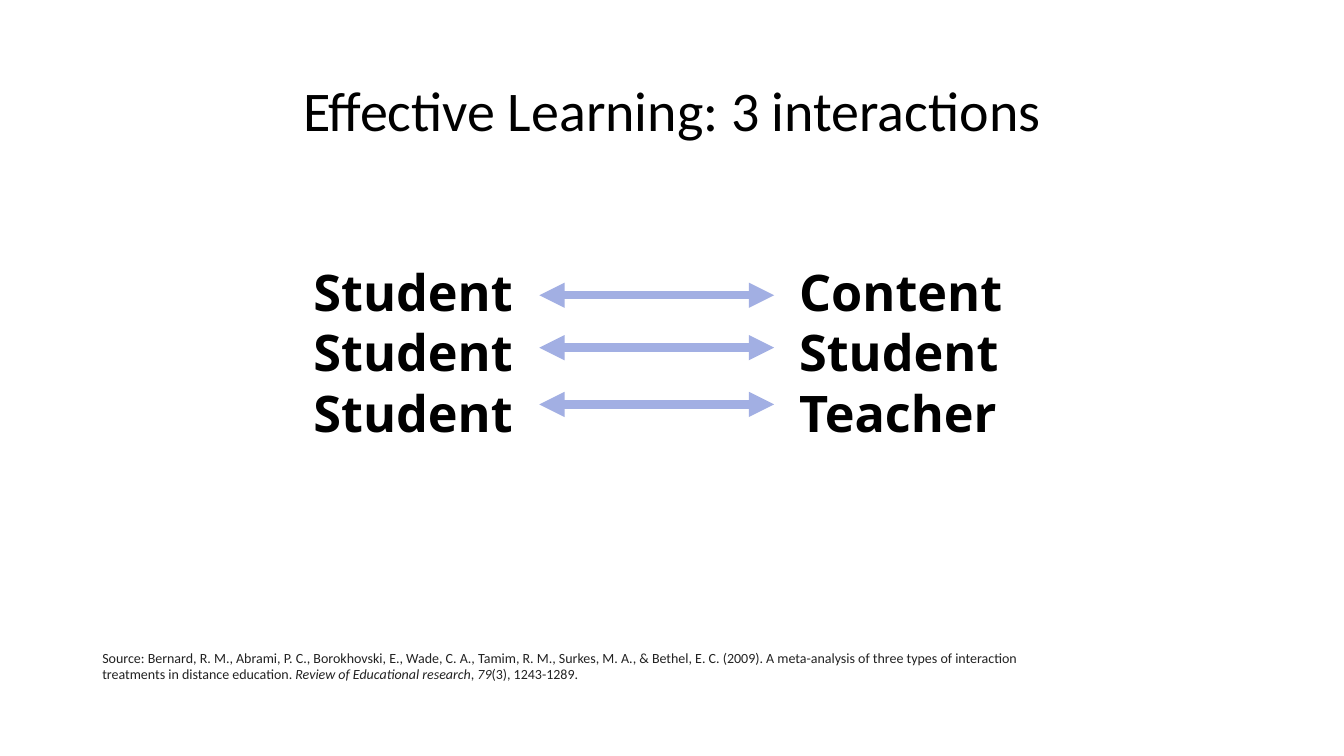
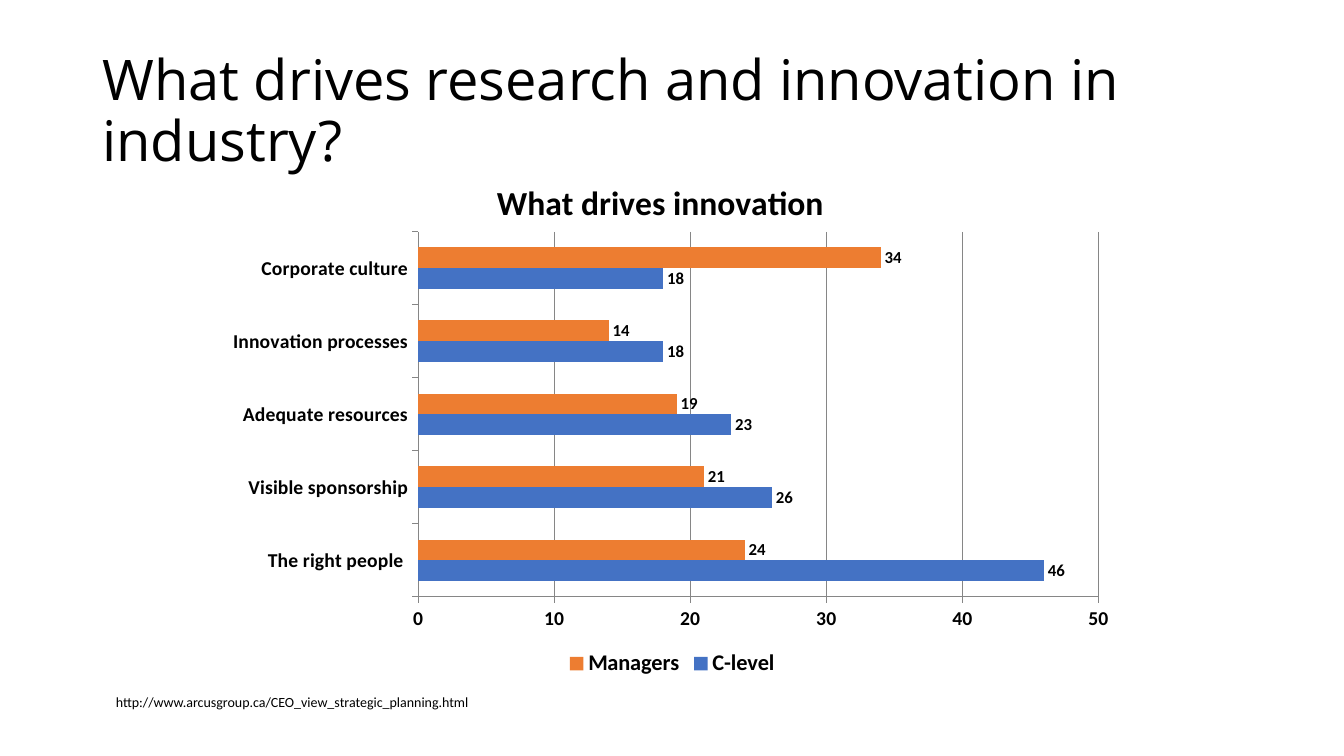
from lxml import etree
from pptx import Presentation
from pptx.chart.data import CategoryChartData
from pptx.dml.color import RGBColor
from pptx.enum import chart as ch, shapes, text
from pptx.oxml import parse_xml
from pptx.oxml.ns import nsdecls, qn
from pptx.util import Cm, Pt

BLACK = RGBColor(0x00, 0x00, 0x00)
SOURCE_GREY = RGBColor(0x22, 0x22, 0x22)
ARROW_BLUE = RGBColor(0xA2, 0xAF, 0xE3)
AXIS_GREY = RGBColor(0x86, 0x86, 0x86)
BLUE = RGBColor(0x44, 0x72, 0xC4)
ORANGE = RGBColor(0xED, 0x7D, 0x31)
SANS, DISPLAY = "Calibri", "Open Sans"

# Boxes are left, top, width, height in centimetres
TITLE_BOX = (2.33, 1.01, 29.21, 3.68)

INTERACTIONS_TITLE = "Effective Learning: 3 interactions"
PARTNERS = [
    ((7.65, 6.45, 5.59, 4.88), ["Student", "Student", "Student"]),
    ((19.89, 6.45, 5.87, 4.88), ["Content", "Student", "Teacher"]),
]
ARROW_LEFT, ARROW_RIGHT = 13.59, 19.51
ARROW_ROWS = [7.44, 8.76, 10.19]
SOURCE_BOX = (2.33, 16.23, 24.84, 1.12)
SOURCE = [  # text, italic
    ("Source: Bernard, R. M., Abrami, P. C., Borokhovski, E., Wade, C. A., "
     "Tamim, R. M., Surkes, M. A., & Bethel, E. C. (2009). A meta-analysis of "
     "three types of interaction treatments in distance education. ", False),
    ("Review of Educational research", True),
    (", ", False),
    ("79", True),
    ("(3), 1243-1289.", False),
]

DRIVERS_TITLE = "What drives research and innovation in industry?"
CHART_BOX = (5.51, 3.84, 22.86, 13.34)
CHART_TITLE = "What drives innovation"
DRIVERS = ["The right people ", "Visible sponsorship", "Adequate resources",
           "Innovation processes", "Corporate culture"]
SERIES = [
    ("C-level", BLUE, [46, 26, 23, 18, 18]),
    ("Managers", ORANGE, [24, 21, 19, 14, 34]),
]
LINK_BOX = (2.67, 17.35, 9.68, 0.69)
LINK = "http://www.arcusgroup.ca/CEO_view_strategic_planning.html"


def set_font(font, size, name=SANS, color=BLACK, bold=False, italic=False):
    font.name, font.size = name, Pt(size)
    font.bold, font.italic = bold, italic
    font.color.rgb = color


def write(tf, paragraphs, align=text.PP_ALIGN.LEFT, spacing=None, **fmt):
    """Fill a text frame; a paragraph is a string or a list of (text, italic)."""
    for i, runs in enumerate(paragraphs):
        p = tf.add_paragraph() if i else tf.paragraphs[0]
        p.alignment = align
        p.line_spacing = spacing
        for words, italic in [(runs, False)] if isinstance(runs, str) else runs:
            r = p.add_run()
            r.text = words
            set_font(r.font, italic=italic, **fmt)


def add_text(slide, box, paragraphs, wrap=False, **fmt):
    tf = slide.shapes.add_textbox(*map(Cm, box)).text_frame
    tf.word_wrap = wrap
    tf.auto_size = text.MSO_AUTO_SIZE.SHAPE_TO_FIT_TEXT
    write(tf, paragraphs, **fmt)


def add_titled_slide(prs, title, **fmt):
    slide = prs.slides.add_slide(prs.slide_layouts[5])
    sp = slide.shapes.title
    sp.left, sp.top, sp.width, sp.height = map(Cm, TITLE_BOX)
    tf = sp.text_frame
    tf.word_wrap = True
    tf.auto_size = text.MSO_AUTO_SIZE.NONE
    tf.vertical_anchor = text.MSO_ANCHOR.MIDDLE
    write(tf, [title], size=40, spacing=0.9, **fmt)
    return slide


def add_double_arrow(slide, y):
    line = slide.shapes.add_connector(
        shapes.MSO_CONNECTOR.STRAIGHT,
        Cm(ARROW_LEFT), Cm(y), Cm(ARROW_RIGHT), Cm(y))
    line.line.color.rgb = ARROW_BLUE
    line.line.width = Pt(6)
    ln = line.line._get_or_add_ln()
    for end in ("a:headEnd", "a:tailEnd"):
        etree.SubElement(ln, qn(end), type="triangle")
    etree.SubElement(line._element.spPr, qn("a:effectLst"))


def manual_layout(**values):
    modes = "".join(f'<c:{k}Mode val="edge"/>' for k in ("x", "y"))
    sizes = "".join(f'<c:{k} val="{v}"/>' for k, v in values.items())
    target = '<c:layoutTarget val="inner"/>' if "w" in values else ""
    return parse_xml(f'<c:layout {nsdecls("c")}><c:manualLayout>{target}'
                     f'{modes}{sizes}</c:manualLayout></c:layout>')


def drop_layout(element):
    for old in element.findall(qn("c:layout")):
        element.remove(old)


def place_chart_parts(chart):
    title = chart.chart_title._element
    drop_layout(title)
    title.find(qn("c:tx")).addnext(manual_layout(x=0.3, y=0.04))
    plot_area = chart._chartSpace.chart.plotArea
    drop_layout(plot_area)
    plot_area.insert(0, manual_layout(x=0.22, y=0.15, w=0.75, h=0.69))


def style_line(line):
    line.color.rgb = AXIS_GREY
    line.width = Pt(0.75)


def add_drivers_chart(slide):
    data = CategoryChartData()
    data.categories = DRIVERS
    for name, _, values in SERIES:
        data.add_series(name, values)
    chart = slide.shapes.add_chart(
        ch.XL_CHART_TYPE.BAR_CLUSTERED, *map(Cm, CHART_BOX), data).chart
    set_font(chart.font, 10)

    chart.has_title = True
    write(chart.chart_title.text_frame, [CHART_TITLE],
          align=text.PP_ALIGN.CENTER, size=24, bold=True)
    chart.has_legend = True
    chart.legend.position = ch.XL_LEGEND_POSITION.BOTTOM
    chart.legend.include_in_layout = False
    set_font(chart.legend.font, 16, bold=True)

    for axis in (chart.category_axis, chart.value_axis):
        axis.major_tick_mark = ch.XL_TICK_MARK.OUTSIDE
        axis.minor_tick_mark = ch.XL_TICK_MARK.NONE
        set_font(axis.tick_labels.font, 14, bold=True)
        style_line(axis.format.line)
    scale = chart.value_axis
    scale.minimum_scale, scale.maximum_scale, scale.major_unit = 0, 50, 10
    scale.has_major_gridlines = True
    style_line(scale.major_gridlines.format.line)

    plot = chart.plots[0]
    plot.gap_width = 150
    plot.vary_by_categories = False
    for series, (_, color, _) in zip(plot.series, SERIES):
        series.format.fill.solid()
        series.format.fill.fore_color.rgb = color
        labels = series.data_labels
        labels.show_value = True
        labels.position = ch.XL_LABEL_POSITION.OUTSIDE_END
        set_font(labels.font, 12, bold=True)
    place_chart_parts(chart)


def build_interactions(prs):
    slide = add_titled_slide(prs, INTERACTIONS_TITLE,
                             align=text.PP_ALIGN.CENTER)
    add_text(slide, SOURCE_BOX, [SOURCE], wrap=True, size=10,
             color=SOURCE_GREY)
    for box, names in PARTNERS:
        add_text(slide, box, names, size=36, name=DISPLAY, bold=True)
    for y in ARROW_ROWS:
        add_double_arrow(slide, y)


def build_drivers(prs):
    slide = add_titled_slide(prs, DRIVERS_TITLE, name=DISPLAY)
    add_text(slide, LINK_BOX, [LINK], size=10)
    add_drivers_chart(slide)


def main():
    prs = Presentation()
    prs.slide_width, prs.slide_height = Cm(33.87), Cm(19.05)
    build_interactions(prs)
    build_drivers(prs)
    prs.save("out.pptx")


if __name__ == "__main__":
    main()
